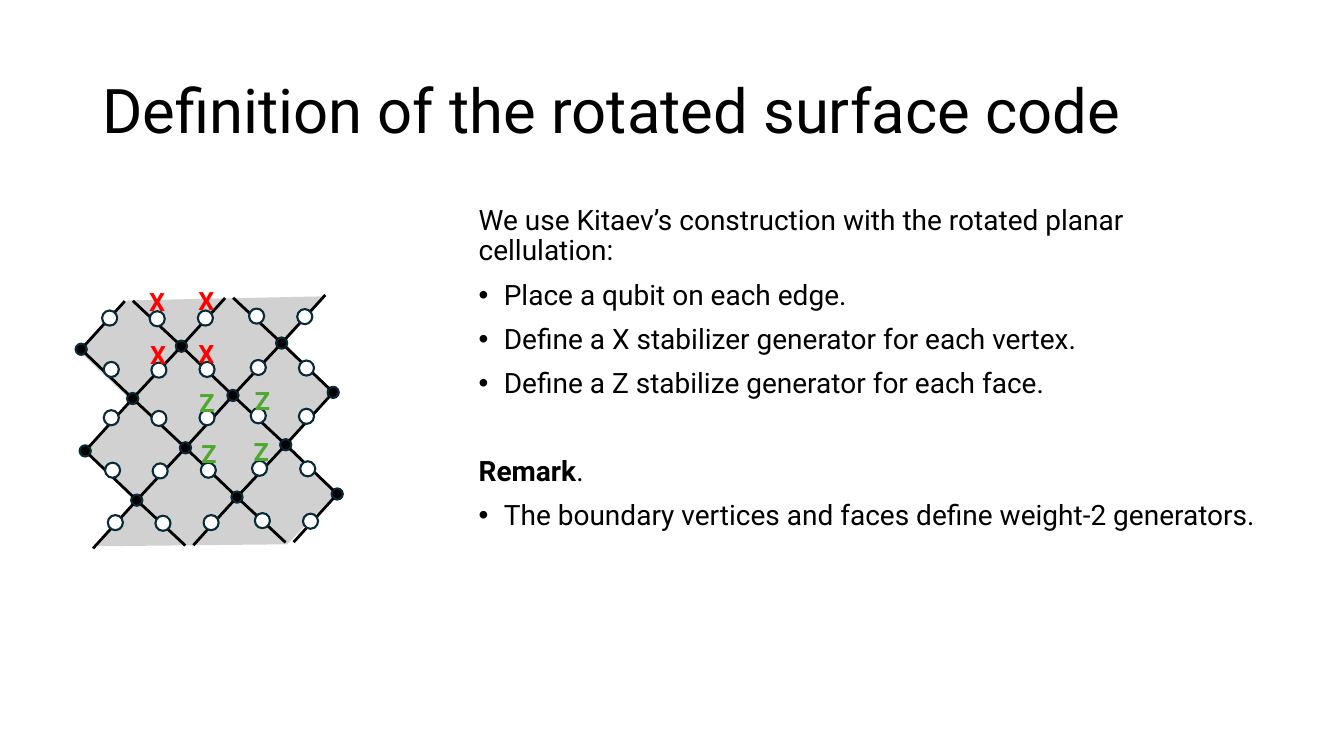
from lxml import etree
from pptx import Presentation
from pptx import util as u
from pptx.dml.color import RGBColor
from pptx.enum import shapes, text
from pptx.oxml.ns import qn

COLORS = {
    "text": "000000", "face": "D1D1D1", "edge": "000000", "vertex": "000000",
    "qubit": "FFFFFF", "outline": "092A39", "X": "FF0000", "Z": "4EA72E",
}


def color(name):
    return RGBColor.from_string(COLORS[name])


class SlideBuilder:
    def __init__(self, slide, font):
        self.slide = slide
        self.font = font

    def text_box(self, left, top, width, height, anchor=text.MSO_ANCHOR.TOP):
        box = self.slide.shapes.add_textbox(*map(u.Pt, (left, top, width, height)))
        frame = box.text_frame
        frame.word_wrap = True
        frame.vertical_anchor = anchor
        return frame

    def style(self, paragraph, size, color_name="text", bold=False):
        paragraph.font.name = self.font
        paragraph.font.size = u.Pt(size)
        paragraph.font.bold = bold
        paragraph.font.color.rgb = color(color_name)

    def title(self, words, *bounds):
        paragraph = self.text_box(*bounds, anchor=text.MSO_ANCHOR.MIDDLE).paragraphs[0]
        paragraph.text = words
        paragraph.line_spacing = 0.9
        self.style(paragraph, 44)

    def body(self, items, *bounds):
        """Each item is (lead in bold, words, bulleted, space before)."""
        frame = self.text_box(*bounds)
        for index, (lead, words, bulleted, space) in enumerate(items):
            paragraph = frame.add_paragraph() if index else frame.paragraphs[0]
            self.style(paragraph, 20)
            paragraph.line_spacing = 0.9
            paragraph.space_before = u.Pt(space)
            if lead:
                run = paragraph.add_run()
                run.text = lead
                run.font.bold = True
            paragraph.add_run().text = words
            if bulleted:
                self.bullet(paragraph)

    def bullet(self, paragraph):
        properties = paragraph._p.get_or_add_pPr()
        properties.set("marL", str(u.Pt(18)))
        properties.set("indent", str(u.Pt(-18)))
        font = etree.Element(qn("a:buFont"), typeface="Arial")
        mark = etree.Element(qn("a:buChar"), char="•")
        following = properties.find(qn("a:defRPr"))
        for element in (font, mark):
            if following is None:
                properties.append(element)
            else:
                following.addprevious(element)

    def letter(self, letter, left, top):
        paragraph = self.text_box(left, top, 25.5, 29).paragraphs[0]
        paragraph.text = letter
        self.style(paragraph, 18, letter, bold=True)

    def dot(self, center, diameter, fill):
        x, y = center
        shape = self.slide.shapes.add_shape(
            shapes.MSO_SHAPE.OVAL, u.Pt(x - diameter / 2), u.Pt(y - diameter / 2),
            u.Pt(diameter), u.Pt(diameter))
        shape.shadow.inherit = False
        shape.fill.solid()
        shape.fill.fore_color.rgb = color(fill)
        shape.line.color.rgb = color("outline")
        shape.line.width = u.Pt(1.5)

    def edge(self, start, end, trim=0.08):
        """Line between two vertices, stopping short of both."""
        (x1, y1), (x2, y2) = start, end
        dx, dy = (x2 - x1) * trim, (y2 - y1) * trim
        line = self.slide.shapes.add_connector(
            shapes.MSO_CONNECTOR.STRAIGHT,
            *map(u.Pt, (x1 + dx, y1 + dy, x2 - dx, y2 - dy)))
        line.line.color.rgb = color("edge")
        line.line.width = u.Pt(2)
        etree.SubElement(line._element.spPr, qn("a:effectLst"))

    def area(self, points, fill):
        points = [(u.Pt(x), u.Pt(y)) for x, y in points]
        builder = self.slide.shapes.build_freeform(*points[0], scale=1.0)
        builder.add_line_segments(points[1:], close=True)
        shape = builder.convert_to_shape()
        shape.shadow.inherit = False
        shape.fill.solid()
        shape.fill.fore_color.rgb = color(fill)
        shape.line.fill.background()


def vertex(row, column):
    """Center of a lattice vertex; odd rows are shifted half a cell right."""
    pair, odd = divmod(row, 2)
    return (58 + 2.9 * pair + 36.8 * odd + 71.6 * column,
            249.5 + 72.6 * pair + 35.2 * odd - 2.2 * column)


def main():
    presentation = Presentation()
    presentation.slide_width = u.Pt(960)
    presentation.slide_height = u.Pt(540)
    slide = presentation.slides.add_slide(presentation.slide_layouts[6])
    builder = SlideBuilder(slide, "Roboto")

    # Shaded faces
    builder.area([
        (56.2, 250.6), (91.4, 214.6), (230.4, 211.7), (202.3, 243.4),
        (236.9, 280.1), (204.5, 316.1), (240.5, 352.1), (205.2, 388.8),
        (69.8, 390.2), (97.2, 357.8), (61.2, 322.6), (94.3, 286.6)], "face")

    # Vertices, and the edges between each row and the next
    for row in range(4):
        for column in range(3):
            builder.dot(vertex(row, column), 8, "vertex")
    for row in range(-1, 4):
        odd = row % 2
        for column in range(3):
            builder.edge(vertex(row, column), vertex(row + 1, column))
        for column in range(2):
            builder.edge(vertex(row, column + 1 - odd), vertex(row + 1, column + odd))

    # Title and body
    builder.title("Definition of the rotated surface code", 66, 28.8, 828, 104.4)
    builder.body([
        ("", "We use Kitaev’s construction with the rotated planar cellulation:", False, 10),
        ("", "Place a qubit on each edge.", True, 10),
        ("", "Define a X stabilizer generator for each vertex.", True, 10),
        ("", "Define a Z stabilize generator for each face.", True, 10),
        ("Remark", ".", False, 41),
        ("", "The boundary vertices and faces define weight-2 generators.", True, 10),
    ], 334.8, 144, 569.5, 342.7)

    # Qubits, one on each edge
    qubit_rows = [(78.3, 227.2), (79.5, 263.9), (79.5, 298.4), (80.4, 335.9), (82.4, 373.3)]
    qubit_columns = [(0, 0), (34, 0.5), (68.4, 0), (105, -1.4), (139.4, -1)]
    for x, y in qubit_rows:
        for dx, dy in qubit_columns:
            builder.dot((x + dx, y + dy), 10.8, "qubit")

    # Stabilizer labels
    labels = {
        "X": [(99.4, 200.9), (134.6, 200.2), (134.6, 238.3), (100.1, 239)],
        "Z": [(135.4, 272.9), (175, 271.4), (174.2, 308.2), (136.8, 309.6)],
    }
    for letter, corners in labels.items():
        for left, top in corners:
            builder.letter(letter, left, top)

    presentation.save("out.pptx")


if __name__ == "__main__":
    main()
